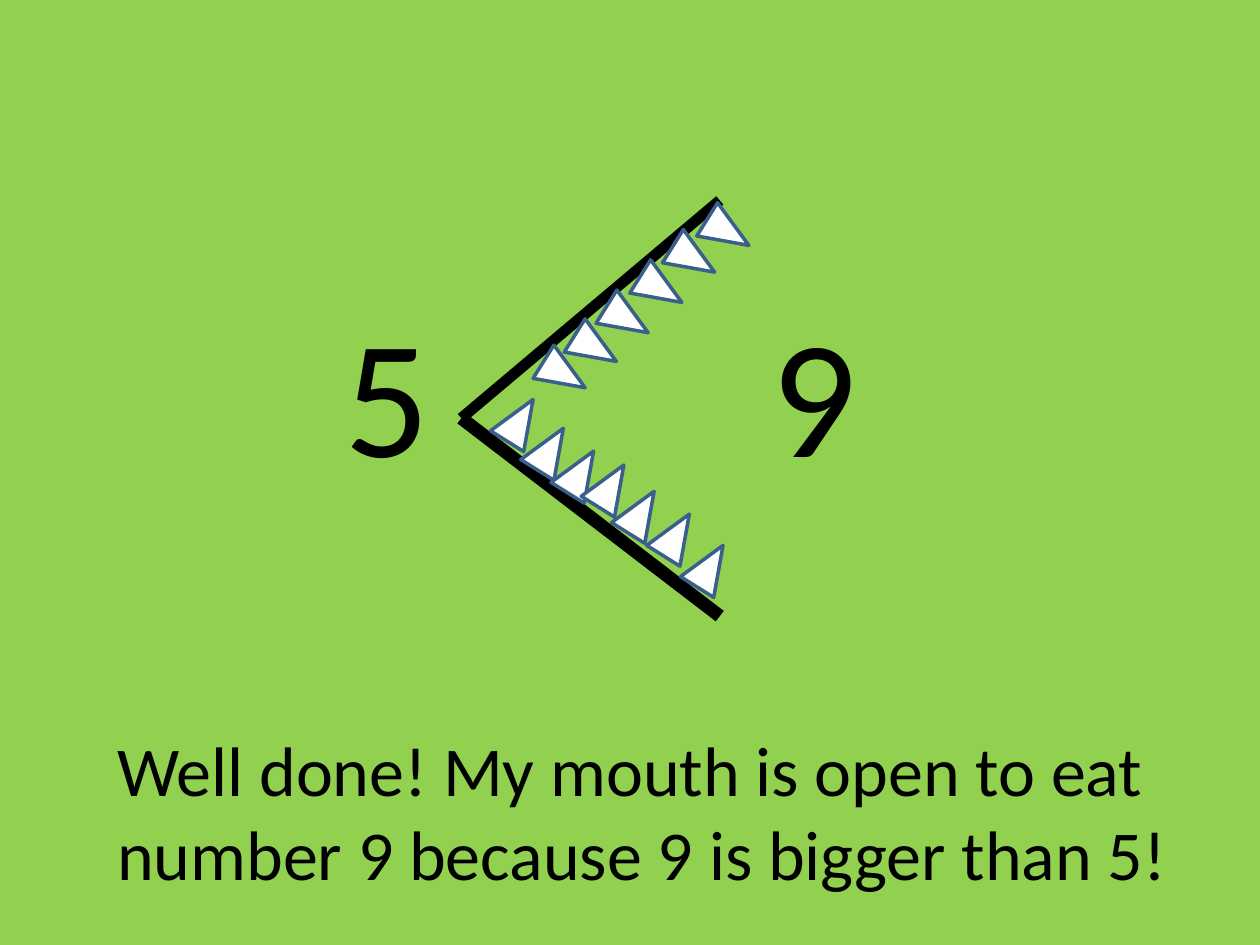
from lxml import etree
from pptx import Presentation
from pptx.dml.color import RGBColor
from pptx.enum.shapes import MSO_CONNECTOR, MSO_SHAPE
from pptx.enum.text import MSO_AUTO_SIZE
from pptx.oxml.ns import qn
from pptx.util import Cm, Pt

LINE = MSO_CONNECTOR.STRAIGHT
TRIANGLE = MSO_SHAPE.ISOSCELES_TRIANGLE
FIT = MSO_AUTO_SIZE.SHAPE_TO_FIT_TEXT
COLORS = {"background": "92D050", "ink": "000000", "tooth": "FFFFFF", "tooth_edge": "3A5F8C"}
TOOTH_SIZE = (0.79, 0.99)
TEETH = {
    32: [(0.79, 3.94), (1.4, 4.52), (2.01, 4.98), (2.62, 5.26), (3.23, 5.79), (3.94, 6.25), (4.62, 6.88)],
    122: [(4.29, 0.69), (3.63, 1.3), (2.95, 1.91), (2.31, 2.49), (1.68, 3.02), (4.98, 0.15)],
}


def color(name):
    """Return the named colour."""
    return RGBColor.from_string(COLORS[name])


def add_text(s, box, text, size):
    """Add a wrapping text box and return its text frame."""
    tf = s.shapes.add_textbox(*map(Cm, box)).text_frame
    for key, value in {"word_wrap": True, "auto_size": FIT}.items():
        setattr(tf, key, value)
    r = tf.paragraphs[0].add_run()
    r.text = text
    for key, value in {"name": "Calibri", "size": Pt(size)}.items():
        setattr(r.font, key, value)
    r.font.color.rgb = color("ink")
    return tf


def add_numbers(s, box, first, second, indent, tab):
    """Place two large numbers apart on one line with a tab stop."""
    tf = add_text(s, box, f"{first}\t{second}", 96)
    tf.margin_left = Cm(indent)
    pPr = tf.paragraphs[0]._p.get_or_add_pPr()
    tabs = etree.SubElement(pPr, qn("a:tabLst"))
    etree.SubElement(tabs, qn("a:tab"), pos=str(Cm(tab)), algn="l")


def add_jaw(group, start, end, width):
    """Draw one jaw as a thick line."""
    sp = group.shapes.add_connector(LINE, *map(Cm, start + end))
    sp.line.color.rgb = color("ink")
    sp.line.width = Pt(width)
    etree.SubElement(sp._element.spPr, qn("a:effectLst"))


def add_tooth(group, x, y, rotation):
    """Draw one white tooth turned to face into the mouth."""
    sp = group.shapes.add_shape(TRIANGLE, *map(Cm, (x, y) + TOOTH_SIZE))
    sp.rotation = rotation
    sp.shadow.inherit = False
    sp.fill.solid()
    sp.fill.fore_color.rgb = color("tooth")
    sp.line.color.rgb = color("tooth_edge")
    sp.line.width = Pt(2)


def add_mouth(s, box):
    """Draw the open mouth as a group of two jaws and their teeth."""
    left, top, width, height = box
    group = s.shapes.add_group_shape()
    hinge = (left, top + 4.39)
    add_jaw(group, (left + width, top), hinge, 6.25)
    add_jaw(group, hinge, (left + width, top + height), 7.5)
    for rotation, places in TEETH.items():
        for x, y in places:
            add_tooth(group, left + x, top + y, rotation)


def main():
    """Build and save the slide."""
    prs = Presentation()
    prs.slide_width, prs.slide_height = Cm(25.4), Cm(19.05)
    s = prs.slides.add_slide(prs.slide_layouts[6])
    s.background.fill.solid()
    s.background.fill.fore_color.rgb = color("background")
    add_numbers(s, (2.11, 5.72, 19.99, 4.37), "5", "9", 4.84, 8.6)
    add_mouth(s, (9.3, 4.04, 5.21, 8.38))
    message = "Well done! My mouth is open to eat number 9 because 9 is bigger than 5!"
    add_text(s, (2.11, 14.53, 22.2, 3.68), message, 40)
    prs.save("out.pptx")


if __name__ == "__main__":
    main()
